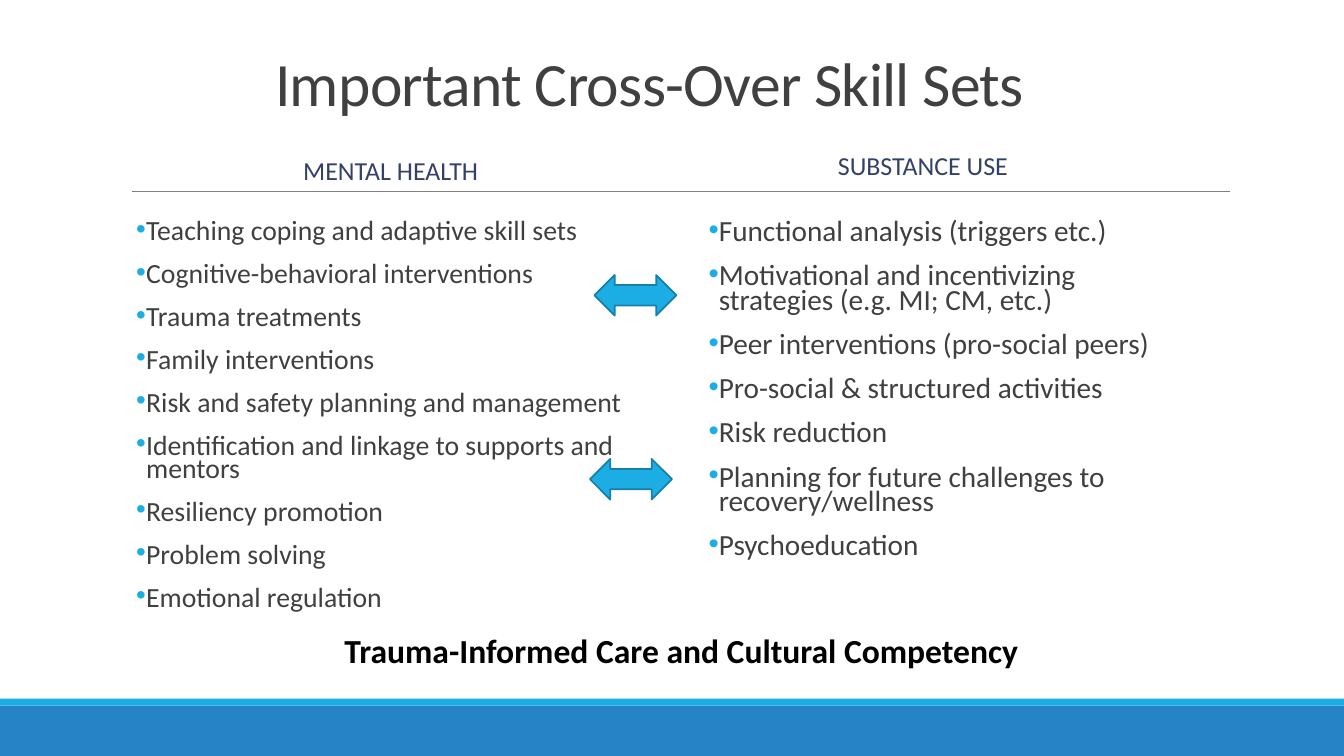
from lxml.etree import SubElement
from pptx import Presentation
from pptx.dml.color import RGBColor
from pptx.enum.shapes import MSO_CONNECTOR, MSO_SHAPE
from pptx.enum.text import MSO_ANCHOR, MSO_AUTO_SIZE, PP_ALIGN
from pptx.oxml.ns import qn
from pptx.util import Pt

WIDE, HIGH = 960, 540
FONT, MARK = "Calibri", "Arial"
SKY, BLUE, EDGE = "1CADE4", "2683C6", "1580A9"
DARK, NAVY, GREY, BLACK = "404040", "344068", "808080", "000000"

TITLE = "Important Cross-Over Skill Sets "
FOOT = "Trauma-Informed Care and Cultural Competency"
SIDES = [
    {
        "head": "MENTAL HEALTH",
        "head_box": (126.7, 110, 304.6, 27.4),
        "list_box": (97.2, 155, 363.6, 303.8),
        "size": 19.8,
        "skills": [
            "Teaching coping and adaptive skill sets",
            "Cognitive-behavioral interventions",
            "Trauma treatments",
            "Family interventions",
            "Risk and safety planning and management",
            "Identification and linkage to supports and mentors",
            "Resiliency promotion",
            "Problem solving",
            "Emotional regulation",
        ],
    },
    {
        "head": "SUBSTANCE USE",
        "head_box": (506.2, 106.4, 306, 27.4),
        "list_box": (506.2, 155, 345.6, 294.5),
        "size": 20.9,
        "skills": [
            "Functional analysis (triggers etc.)",
            "Motivational and incentivizing strategies (e.g. MI; CM, etc.)",
            "Peer interventions (pro-social peers)",
            "Pro-social & structured activities",
            "Risk reduction",
            "Planning for future challenges to recovery/wellness",
            "Psychoeducation",
        ],
    },
]
BARS = [(0, 504, WIDE, 36, BLUE), (0, 499, WIDE, 5, SKY)]
ARROWS = [(424.6, 196.4), (421.4, 327.8)]


def tint(code):
    return RGBColor.from_string(code)


def place(item, box):
    item.left, item.top, item.width, item.height = map(Pt, box)


def write(item, text, size, ink, bold=False, align=None, lead=None, gaps=None):
    frame = item.text_frame
    frame.text = text
    frame.word_wrap = True
    frame.auto_size = MSO_AUTO_SIZE.NONE
    for para in frame.paragraphs:
        para.alignment = align
        para.line_spacing = lead
        if gaps:
            para.space_before, para.space_after = map(Pt, gaps)
        for run in para.runs:
            font = run.font
            font.name, font.size, font.bold = FONT, Pt(size), bold
            font.color.rgb = tint(ink)
    return frame


def bullet(para):
    props = para._p.get_or_add_pPr()
    props.set("marL", str(Pt(7.2)))
    props.set("indent", str(-Pt(7.2)))
    hue = SubElement(props, qn("a:buClr"))
    SubElement(hue, qn("a:srgbClr"), val=SKY)
    SubElement(props, qn("a:buFont"), typeface=MARK)
    SubElement(props, qn("a:buChar"), char="•")


def draw(slide, kind, box, fill, edge=None):
    shape = slide.shapes.add_shape(kind, *map(Pt, box))
    shape.shadow.inherit = False
    shape.fill.solid()
    shape.fill.fore_color.rgb = tint(fill)
    if edge:
        shape.line.color.rgb = tint(edge)
        shape.line.width = Pt(1.25)
    else:
        shape.line.fill.background()


def main():
    deck = Presentation()
    deck.slide_width, deck.slide_height = Pt(WIDE), Pt(HIGH)
    slide = deck.slides.add_slide(deck.slide_layouts[4])
    title, *slots = slide.placeholders

    for *box, fill in BARS:
        draw(slide, MSO_SHAPE.RECTANGLE, box, fill)
    rule = slide.shapes.add_connector(
        MSO_CONNECTOR.STRAIGHT, Pt(94.3), Pt(136.8), Pt(878.9), Pt(136.8))
    rule.line.color.rgb = tint(GREY)
    rule.line.width = Pt(0.5)
    SubElement(rule._element.spPr, qn("a:effectLst"))

    place(title, (158.4, 27.4, 620.6, 61.2))
    frame = write(title, TITLE, 44, DARK, align=PP_ALIGN.CENTER, lead=0.85)
    frame.vertical_anchor = MSO_ANCHOR.BOTTOM
    frame.paragraphs[0].runs[0].font._element.set("spc", "-50")

    for side, head, body in zip(SIDES, slots[::2], slots[1::2]):
        place(head, side["head_box"])
        frame = write(head, side["head"], 18.5, NAVY,
                      align=PP_ALIGN.CENTER, lead=0.8, gaps=(12, 2))
        frame.vertical_anchor = MSO_ANCHOR.MIDDLE
        place(body, side["list_box"])
        frame = write(body, "\n".join(side["skills"]), side["size"], DARK,
                      lead=0.7, gaps=(12, 2))
        frame.margin_left = frame.margin_right = 0
        for para in frame.paragraphs:
            bullet(para)

    for left, top in ARROWS:
        draw(slide, MSO_SHAPE.LEFT_RIGHT_ARROW, (left, top, 58.6, 29), SKY, EDGE)
    foot = slide.shapes.add_textbox(*map(Pt, (239, 446.4, 499.7, 36)))
    write(foot, FOOT, 24, BLACK, bold=True)

    deck.save("out.pptx")


if __name__ == "__main__":
    main()
